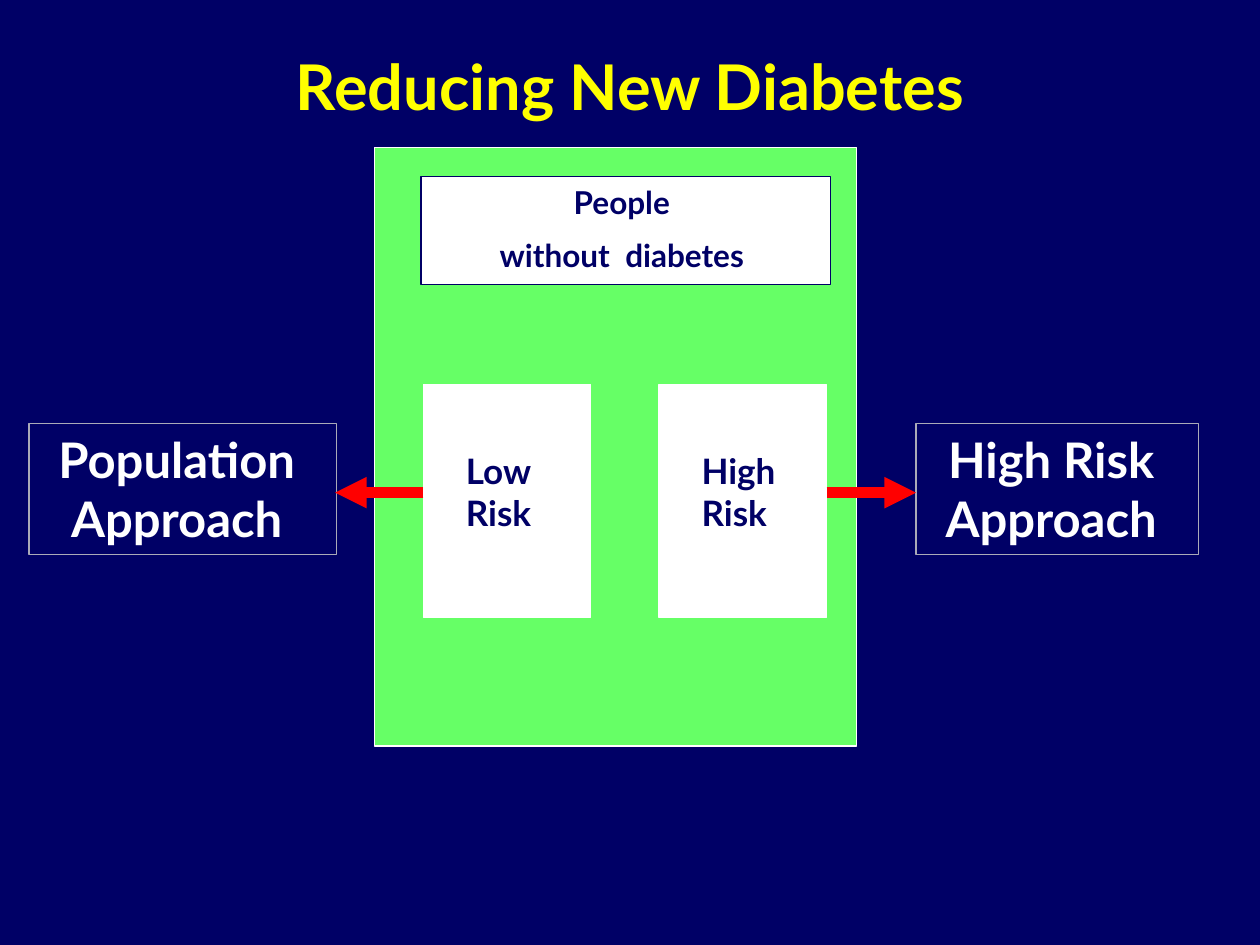
from dataclasses import dataclass

from lxml import etree
from pptx import Presentation
from pptx.dml.color import RGBColor
from pptx.enum import shapes, text
from pptx.oxml import ns
from pptx.util import Inches, Pt


@dataclass(frozen=True)
class Theme:
    font: str = "Lato"
    navy: str = "000066"
    green: str = "66FF66"
    white: str = "FFFFFF"
    yellow: str = "FFFF00"
    red: str = "FF0000"
    border: str = "AAAAB8"
    title_size: int = 36
    approach_size: int = 28
    risk_size: int = 20
    heading_size: int = 18


THEME = Theme()
LEFT, CENTER = text.PP_ALIGN.LEFT, text.PP_ALIGN.CENTER


def color(value):
    return RGBColor.from_string(value)


def place(shape, box):
    shape.left, shape.top, shape.width, shape.height = map(Inches, box)


def write(shape, lines, size, font_color, align=CENTER, wrap=True, gap=0):
    """Fill a shape with bold lines, set apart by a gap in points."""
    frame = shape.text_frame
    frame.word_wrap = wrap
    frame.auto_size = text.MSO_AUTO_SIZE.NONE
    frame.vertical_anchor = text.MSO_ANCHOR.TOP
    frame.margin_left = frame.margin_right = Inches(0.1)
    frame.margin_top = frame.margin_bottom = Inches(0.05)
    frame.text = "\n".join(lines)
    for index, paragraph in enumerate(frame.paragraphs):
        paragraph.alignment = align
        paragraph.line_spacing = 1.0
        paragraph.space_before = Pt(gap if index else 0)
        font = paragraph.font
        font.name, font.size, font.bold = THEME.font, Pt(size), True
        font.color.rgb = color(font_color)


def add_panel(slide, box, fill, line):
    panel = slide.shapes.add_shape(shapes.MSO_SHAPE.RECTANGLE, *map(Inches, box))
    panel.shadow.inherit = False
    panel.fill.solid()
    panel.fill.fore_color.rgb = color(fill)
    panel.line.color.rgb = color(line)
    panel.line.width = Pt(0.75)
    return panel


def add_title(slide, box, title):
    place(slide.shapes.title, box)
    write(slide.shapes.title, [title], THEME.title_size, THEME.yellow)


def add_population(slide, box):
    """Green panel with its heading near the top."""
    left, top, _, _ = box
    add_panel(slide, box, THEME.green, THEME.white)
    heading = add_panel(slide, (left + 0.37, top + 0.23, 3.25, 0.86),
                        THEME.white, THEME.navy)
    write(heading, ["People ", "without  diabetes "], THEME.heading_size,
          THEME.navy, gap=9)


def add_risk_card(slide, box, lines):
    left, top, _, _ = box
    add_panel(slide, box, THEME.white, THEME.white)
    label_box = (left + 0.24, top + 0.47, 0.94, 0.77)
    label = slide.shapes.add_textbox(*map(Inches, label_box))
    write(label, lines, THEME.risk_size, THEME.navy, LEFT, wrap=False)


def add_approach(slide, box, lines):
    panel = add_panel(slide, box, THEME.navy, THEME.border)
    write(panel, lines, THEME.approach_size, THEME.white, wrap=False)


def add_arrow(slide, start, end, y):
    arrow = slide.shapes.add_connector(
        shapes.MSO_CONNECTOR.STRAIGHT,
        Inches(start), Inches(y), Inches(end), Inches(y))
    arrow.line.color.rgb = color(THEME.red)
    arrow.line.width = Pt(6)
    etree.SubElement(arrow.line._get_or_add_ln(), ns.qn("a:tailEnd"),
                     type="triangle")
    etree.SubElement(arrow._element.spPr, ns.qn("a:effectLst"))


def main():
    presentation = Presentation()
    presentation.slide_width, presentation.slide_height = Inches(10), Inches(7.5)
    slide = presentation.slides.add_slide(presentation.slide_layouts[5])
    slide.background.fill.solid()
    slide.background.fill.fore_color.rgb = color(THEME.navy)

    add_title(slide, (0.83, 0.33, 8.46, 0.71), "Reducing New Diabetes ")
    add_population(slide, (2.97, 1.17, 3.83, 4.75))

    # Risk groups inside the population
    card_top, card_width, card_height = 3.05, 1.33, 1.85
    low_left, high_left = 3.36, 5.23
    for left, level in ((low_left, "Low"), (high_left, "High")):
        add_risk_card(slide, (left, card_top, card_width, card_height),
                      [level, "Risk"])

    # Approach for each risk group
    approach_top, approach_height, arrow_y = 3.36, 1.04, 3.91
    for left, width, name, start, end in (
            (0.23, 2.44, "Population ", low_left, 2.66),
            (7.27, 2.24, "High Risk ", high_left + card_width, 7.27)):
        add_approach(slide, (left, approach_top, width, approach_height),
                     [name, "Approach "])
        add_arrow(slide, start, end, arrow_y)

    presentation.save("out.pptx")


if __name__ == "__main__":
    main()
